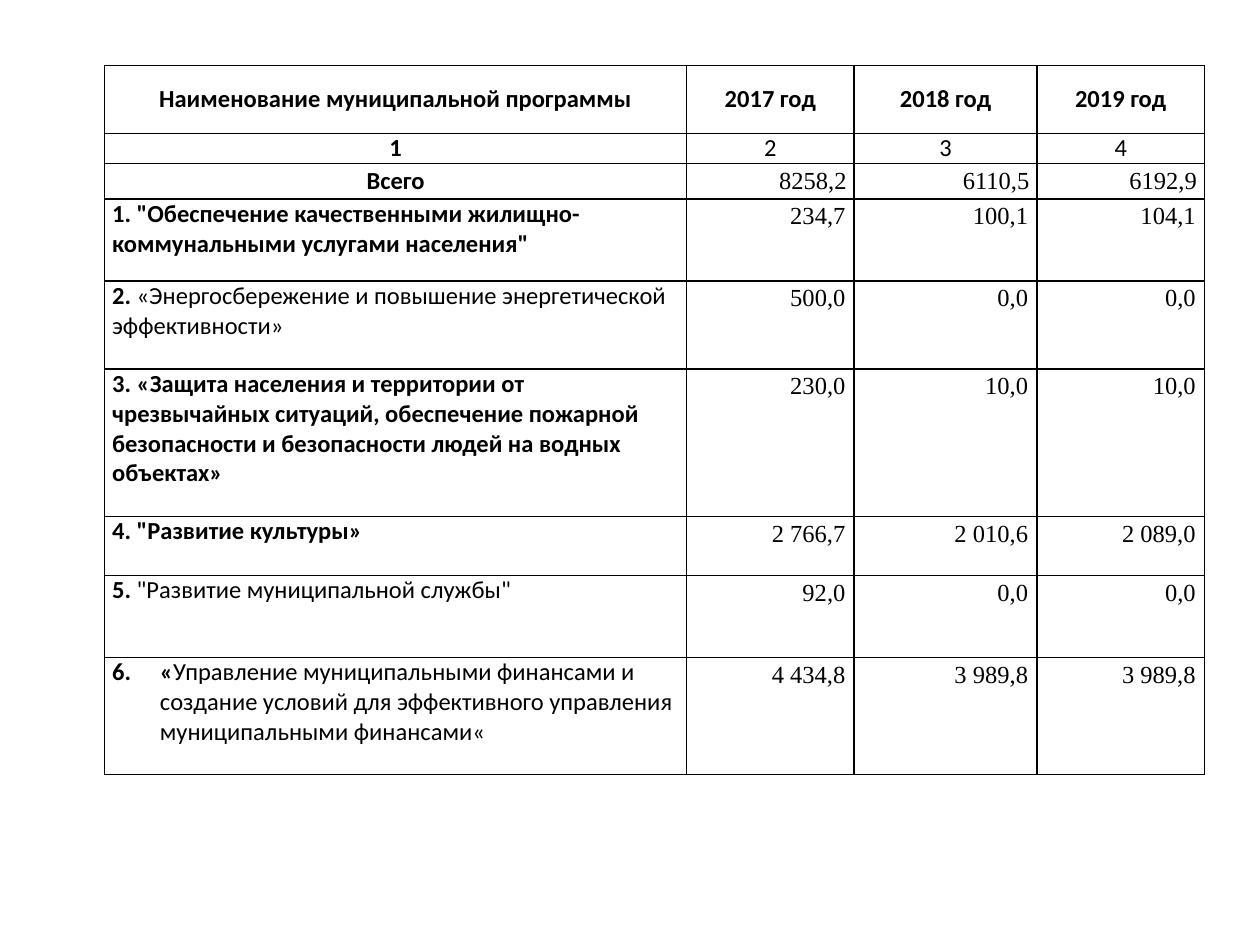
from lxml.etree import SubElement
from pptx import Presentation
from pptx.dml.color import RGBColor
from pptx.enum.text import MSO_ANCHOR, PP_ALIGN
from pptx.oxml.ns import qn
from pptx.util import Inches, Pt

BLACK = RGBColor(0, 0, 0)
TEXT_FONT, NUMBER_FONT = "Calibri", "Times New Roman"

HEADINGS = ["Наименование муниципальной программы", "2017 год", "2018 год", "2019 год"]
COLUMN_NUMBERS = ["1", "2", "3", "4"]
TOTALS = ["Всего", "8258,2", "6110,5", "6192,9"]
# Each programme: bold text, regular text, amounts by year
PROGRAMMES = [
    ('1. "Обеспечение качественными жилищно-коммунальными услугами населения"', "",
     ["234,7", "100,1", "104,1"]),
    ("2. ", "«Энергосбережение и повышение энергетической эффективности»",
     ["500,0", "0,0", "0,0"]),
    ("3. «Защита населения и территории от чрезвычайных ситуаций, обеспечение пожарной "
     "безопасности и безопасности людей на водных объектах»", "",
     ["230,0", "10,0", "10,0"]),
    ('4. "Развитие культуры»', "", ["2 766,7", "2 010,6", "2 089,0"]),
    ("5. ", '"Развитие муниципальной службы"', ["92,0", "0,0", "0,0"]),
    ("«", "Управление муниципальными финансами и создание условий для эффективного "
     "управления муниципальными финансами«", ["4 434,8", "3 989,8", "3 989,8"]),
]
COLUMN_WIDTHS = [4.62, 1.33, 1.45, 1.33]
ROW_HEIGHTS = [0.54, 0.24, 0.28, 0.65, 0.7, 1.17, 0.47, 0.65, 0.93]
LEFT, TOP = 0.83, 0.52


def add_borders(cell):
    properties = cell._tc.get_or_add_tcPr()
    for position, side in enumerate(("lnL", "lnR", "lnT", "lnB")):
        line = SubElement(properties, qn(f"a:{side}"), w=str(Pt(1)))
        fill = SubElement(line, qn("a:solidFill"))
        SubElement(fill, qn("a:srgbClr"), val=str(BLACK))
        properties.remove(line)
        properties.insert(position, line)


def fill_cell(cell, runs, align, font=TEXT_FONT, anchor=MSO_ANCHOR.TOP,
              inset=0.06, spacing=None):
    """Write (text, bold) runs into a bordered cell and return its paragraph."""
    cell.margin_left = cell.margin_right = Inches(inset)
    cell.margin_top = cell.margin_bottom = 0
    cell.vertical_anchor = anchor
    cell.fill.background()
    add_borders(cell)
    paragraph = cell.text_frame.paragraphs[0]
    paragraph.alignment = align
    if spacing:
        paragraph.line_spacing = spacing
    for text, bold in runs:
        if text:
            run = paragraph.add_run()
            run.text = text
            run.font.name = font
            run.font.size = Pt(14)
            run.font.bold = bold
            run.font.color.rgb = BLACK
    return paragraph


def number_paragraph(paragraph, start):
    properties = paragraph._p.get_or_add_pPr()
    properties.set("marL", str(Inches(0.38)))
    properties.set("indent", str(Inches(-0.38)))
    SubElement(properties, qn("a:buFont"), typeface="+mj-lt")
    SubElement(properties, qn("a:buAutoNum"), type="arabicPeriod", startAt=str(start))


presentation = Presentation()
presentation.slide_width, presentation.slide_height = Inches(10), Inches(7.5)
slide = presentation.slides.add_slide(presentation.slide_layouts[6])
table = slide.shapes.add_table(
    len(ROW_HEIGHTS), len(COLUMN_WIDTHS), Inches(LEFT), Inches(TOP),
    Inches(sum(COLUMN_WIDTHS)), Inches(sum(ROW_HEIGHTS))).table
table.first_row = table.horz_banding = False
for column, width in zip(table.columns, COLUMN_WIDTHS):
    column.width = Inches(width)
for row, height in zip(table.rows, ROW_HEIGHTS):
    row.height = Inches(height)

for index in range(len(COLUMN_WIDTHS)):
    is_name = index == 0
    fill_cell(table.cell(0, index), [(HEADINGS[index], True)], PP_ALIGN.CENTER,
              anchor=MSO_ANCHOR.MIDDLE)
    fill_cell(table.cell(1, index), [(COLUMN_NUMBERS[index], is_name)], PP_ALIGN.CENTER)
    fill_cell(table.cell(2, index), [(TOTALS[index], is_name)],
              PP_ALIGN.CENTER if is_name else PP_ALIGN.RIGHT,
              TEXT_FONT if is_name else NUMBER_FONT, MSO_ANCHOR.MIDDLE)

for row_index, (bold_text, regular_text, amounts) in enumerate(PROGRAMMES, start=3):
    name = fill_cell(table.cell(row_index, 0),
                     [(bold_text, True), (regular_text, False)], PP_ALIGN.LEFT)
    for column_index, amount in enumerate(amounts, start=1):
        fill_cell(table.cell(row_index, column_index), [(amount, False)], PP_ALIGN.RIGHT,
                  NUMBER_FONT, inset=0.07, spacing=1.15)
number_paragraph(name, len(PROGRAMMES))

presentation.save("out.pptx")
